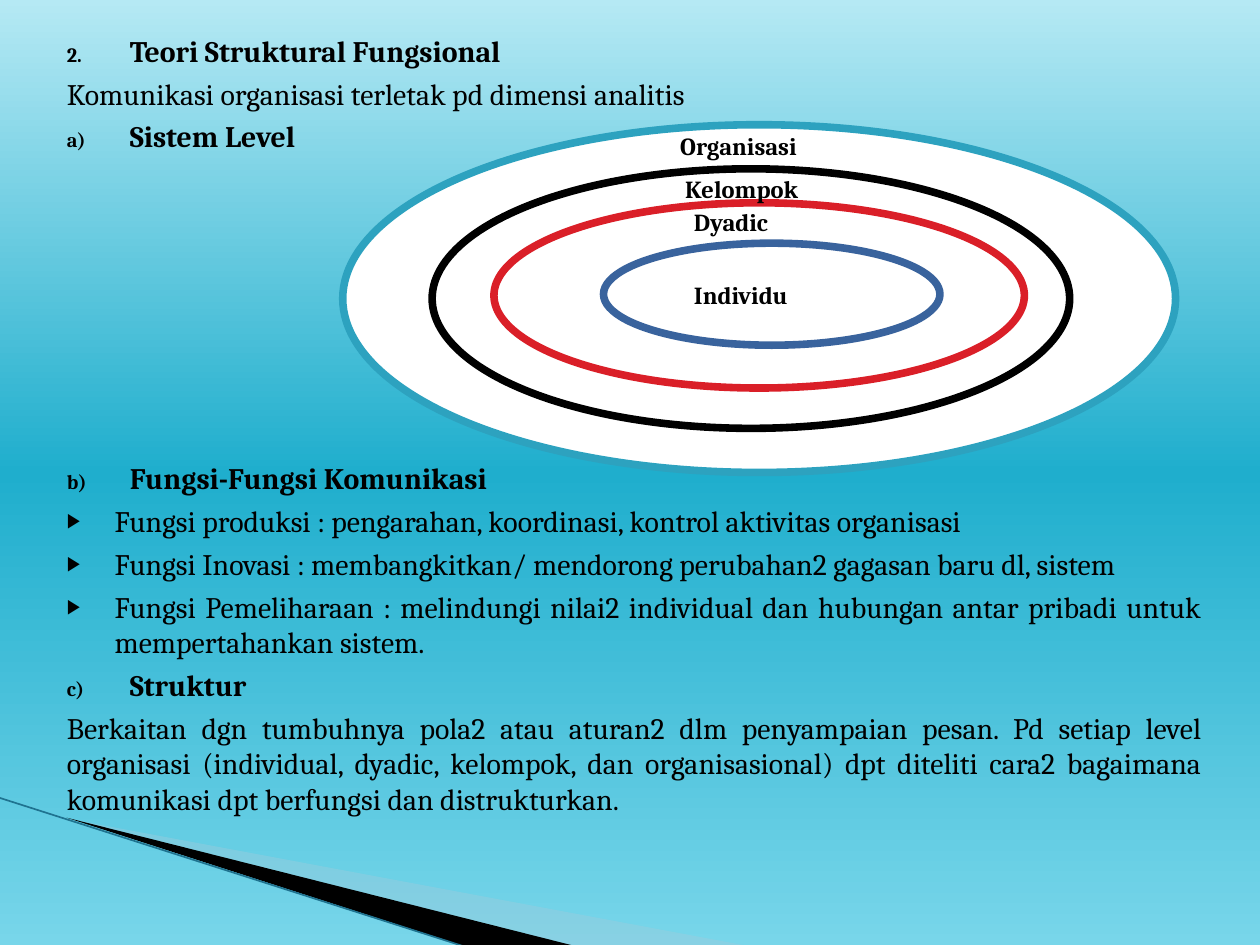
from copy import deepcopy

from lxml import etree
from pptx import Presentation
from pptx.dml.color import RGBColor
from pptx.enum.shapes import MSO_CONNECTOR, MSO_SHAPE
from pptx.enum.text import MSO_ANCHOR, MSO_AUTO_SIZE, PP_ALIGN
from pptx.oxml.ns import qn
from pptx.util import Inches, Pt

JUSTIFY = PP_ALIGN.JUSTIFY
FONT = "Cambria"
BLACK = "000000"

BACKGROUND = [(0, "B5E9F4"), (0.5, "1FAECD"), (1, "78D6EA")]

# points, fill, opacity in percent
WEDGES = [
    ([(0.55, 6.5), (5.95, 7.51), (4.56, 7.51)], "A0CBDC", 40),
    ([(0.53, 6.49), (4.57, 7.51), (3.72, 7.52)], BLACK, 100),
]
EDGE_LINE = (-0.01, 6.33, 3.71, 7.52)
EDGE_COLOR = "1F7390"

# bullet kind -> hanging indent, tag, attributes
BULLETS = {
    "number": (0.5, "a:buAutoNum", {"type": "arabicPeriod"}),
    "letter": (0.5, "a:buAutoNum", {"type": "alphaLcParenR"}),
    "arrow": (0.38, "a:buChar", {"char": "▶"}),
    None: (0, "a:buNone", {}),
}
DIAGRAM_GAP = 175  # points kept free for the ellipses

# text, bullet kind, start number, space before in points
BODY = [
    ("Teori Struktural Fungsional", "number", 2, 0),
    ("Komunikasi organisasi terletak pd dimensi analitis", None, None, 4),
    ("Sistem Level", "letter", 1, 4),
    ("Fungsi-Fungsi Komunikasi", "letter", 2, DIAGRAM_GAP),
    ("Fungsi produksi : pengarahan, koordinasi, kontrol aktivitas organisasi",
     "arrow", None, 4),
    ("Fungsi Inovasi : membangkitkan/ mendorong perubahan2 gagasan baru dl, sistem",
     "arrow", None, 4),
    ("Fungsi Pemeliharaan : melindungi nilai2 individual dan hubungan antar pribadi "
     "untuk mempertahankan sistem.", "arrow", None, 4),
    ("Struktur", "letter", 3, 4),
    ("Berkaitan dgn tumbuhnya pola2 atau aturan2 dlm penyampaian pesan. Pd setiap level "
     "organisasi (individual, dyadic, kelompok, dan organisasional) dpt diteliti cara2 "
     "bagaimana komunikasi dpt berfungsi dan distrukturkan.", None, None, 4),
]

# label, label left and top, ellipse box, outline
LEVELS = [
    ("Organisasi", (5.3, 0.99), (2.72, 0.99, 6.61, 2.76), "2DA2BF"),
    ("Kelompok", (5.34, 1.33), (3.43, 1.34, 5.06, 2.06), BLACK),
    ("Dyadic", (5.41, 1.59), (3.92, 1.61, 4.21, 1.47), "DA1F28"),
    ("Individu", (5.41, 2.17), (4.79, 1.93, 2.67, 0.81), "39639D"),
]


def color(hex_string):
    return RGBColor.from_string(hex_string)


def inches(values):
    return [Inches(value) for value in values]


def fill_background(slide):
    fill = slide.background.fill
    fill.gradient()
    fill.gradient_angle = 270
    stop_list = slide.element.find(".//" + qn("a:gsLst"))
    stop_list.append(deepcopy(stop_list[-1]))
    for stop, (position, hex_string) in zip(fill.gradient_stops, BACKGROUND):
        stop.position = position
        stop.color.rgb = color(hex_string)


def add_wedge(slide, points, hex_string, opacity):
    corners = [tuple(inches(point)) for point in points]
    builder = slide.shapes.build_freeform(*corners[0])
    builder.add_line_segments(corners[1:], close=True)
    wedge = builder.convert_to_shape()
    wedge.shadow.inherit = False
    wedge.fill.solid()
    wedge.fill.fore_color.rgb = color(hex_string)
    wedge.line.fill.background()
    if opacity < 100:
        fill_color = wedge.element.spPr.find(".//" + qn("a:srgbClr"))
        etree.SubElement(fill_color, qn("a:alpha"), val=str(opacity * 1000))


def add_edge_line(slide):
    line = slide.shapes.add_connector(MSO_CONNECTOR.STRAIGHT, *inches(EDGE_LINE))
    line.line.color.rgb = color(EDGE_COLOR)
    line.line.width = Pt(0.95)
    etree.SubElement(line.element.spPr, qn("a:effectLst"))


def set_bullet(paragraph, kind, start):
    indent, tag, attributes = BULLETS[kind]
    properties = paragraph._p.get_or_add_pPr()
    properties.set("marL", str(Inches(indent)))
    properties.set("indent", str(-Inches(indent)))
    if kind:
        bullet_color = etree.SubElement(properties, qn("a:buClr"))
        etree.SubElement(bullet_color, qn("a:srgbClr"), val=BLACK)
        etree.SubElement(properties, qn("a:buSzPct"), val="68000")
    bullet = etree.SubElement(properties, qn(tag), attributes)
    if start:
        bullet.set("startAt", str(start))


def format_text(paragraph, size, bold):
    paragraph.alignment = JUSTIFY
    font = paragraph.font
    font.name, font.size, font.bold = FONT, Pt(size), bold
    font.color.rgb = color(BLACK)


def fill_body(body):
    body.left, body.top, body.width, body.height = inches((0.43, 0.21, 9.21, 6.3))
    frame = body.text_frame
    frame.auto_size = MSO_AUTO_SIZE.NONE
    frame.vertical_anchor = MSO_ANCHOR.TOP
    for index, (text, kind, start, space) in enumerate(BODY):
        paragraph = frame.add_paragraph() if index else frame.paragraphs[0]
        paragraph.text = text
        set_bullet(paragraph, kind, start)
        paragraph.space_before = Pt(space)
        format_text(paragraph, 17, bold=start is not None)


def add_ellipse(slide, box, outline):
    ellipse = slide.shapes.add_shape(MSO_SHAPE.OVAL, *inches(box))
    ellipse.shadow.inherit = False
    ellipse.fill.solid()
    ellipse.fill.fore_color.rgb = color("FFFFFF")
    ellipse.line.color.rgb = color(outline)
    ellipse.line.width = Pt(4.33)


def add_label(slide, text, corner):
    label = slide.shapes.add_textbox(*inches((*corner, 1.23, 0.34)))
    frame = label.text_frame
    frame.word_wrap = True
    frame.auto_size = MSO_AUTO_SIZE.SHAPE_TO_FIT_TEXT
    frame.text = text
    format_text(frame.paragraphs[0], 14, bold=True)


def main():
    presentation = Presentation()
    presentation.slide_width, presentation.slide_height = inches((10, 7.5))
    slide = presentation.slides.add_slide(presentation.slide_layouts[1])
    title, body = slide.placeholders
    title.element.getparent().remove(title.element)

    fill_background(slide)
    for wedge in WEDGES:
        add_wedge(slide, *wedge)
    add_edge_line(slide)
    fill_body(body)
    for _, _, box, outline in LEVELS:
        add_ellipse(slide, box, outline)
    for text, corner, _, _ in LEVELS:
        add_label(slide, text, corner)
    presentation.save("out.pptx")


if __name__ == "__main__":
    main()
